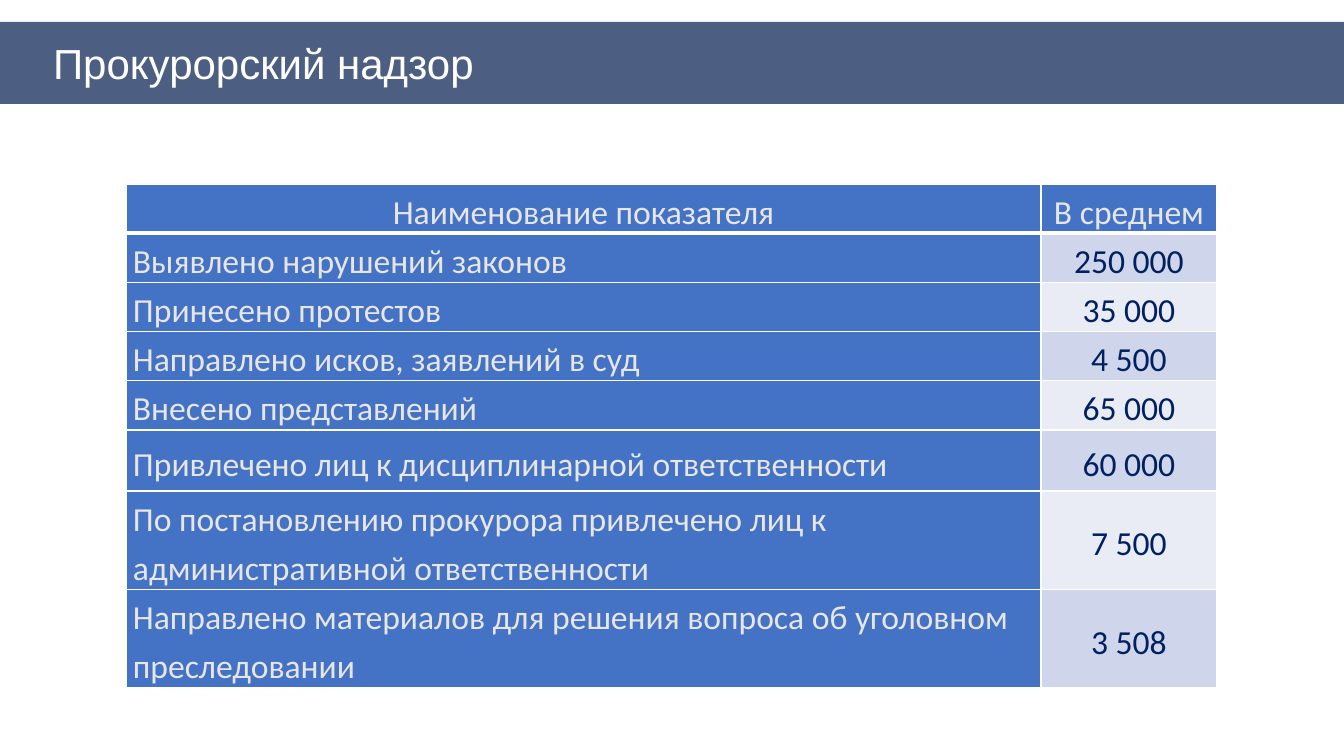
from lxml.etree import SubElement
from pptx import Presentation
from pptx.dml.color import RGBColor
from pptx.enum.text import MSO_ANCHOR, MSO_AUTO_SIZE, PP_ALIGN
from pptx.oxml import parse_xml
from pptx.oxml.ns import nsdecls, qn
from pptx.util import Emu, Pt

WHITE, PALE, BLUE, NAVY = "FFFFFF", "E7E6E6", "4472C4", "002060"
BANDS = ["E9EBF5", "CFD5EA"]
HEADER = ("Наименование показателя", "В среднем")
INDICATORS = [
    ("Выявлено нарушений законов", "250 000"),
    ("Принесено протестов", "35 000"),
    ("Направлено исков, заявлений в суд", "4 500"),
    ("Внесено представлений", "65 000"),
    ("Привлечено лиц к дисциплинарной ответственности", "60 000"),
    ("По постановлению прокурора привлечено лиц к административной ответственности", "7 500"),
    ("Направлено материалов для решения вопроса об уголовном преследовании", "3 508"),
]
ROW_HEIGHTS = [49] * 5 + [61] + [98] * 2


def px(length):
    return Emu(round(length * 914400 / 100.8))


def paint(target, color):
    target.solid()
    target.fore_color.rgb = RGBColor.from_string(color)


class SupervisionSlide:
    def __init__(self, presentation):
        self.slide = presentation.slides.add_slide(presentation.slide_layouts[5])

    def add_text(self, paragraph, text, font, size, color, align):
        paragraph.alignment = align
        run = paragraph.add_run()
        run.text = text
        run.font.name = font
        run.font.size = Pt(size)
        run.font.bold = False
        paint(run.font.fill, color)

    def title(self, text, left, top, width, height):
        heading = self.slide.shapes.title
        heading.left, heading.top = px(left), px(top)
        heading.width, heading.height = px(width), px(height)
        paint(heading.fill, "203864")
        tint = heading._element.spPr.find(".//" + qn("a:srgbClr"))
        SubElement(tint, qn("a:alpha"), val="80000")
        frame = heading.text_frame
        frame.word_wrap = True
        frame.auto_size = MSO_AUTO_SIZE.NONE
        frame.vertical_anchor = MSO_ANCHOR.MIDDLE
        paragraph = frame.paragraphs[0]
        self.add_text(paragraph, text, "Arial", 30, WHITE, PP_ALIGN.LEFT)
        properties = paragraph._p.get_or_add_pPr()
        properties.set("marL", str(px(4)))
        properties.set("indent", str(px(39)))

    def borders(self, cell, top, bottom):
        properties = cell._tc.get_or_add_tcPr()
        sides = {"L": 1, "R": 1, "T": top, "B": bottom}
        for position, (side, points) in enumerate(sides.items()):
            properties.insert(position, parse_xml(
                f'<a:ln{side} {nsdecls("a")} w="{Pt(points)}"><a:solidFill>'
                f'<a:srgbClr val="{WHITE}"/></a:solidFill></a:ln{side}>'))

    def cell(self, cell, text, fill, color, align, top, bottom):
        cell.margin_left = cell.margin_right = px(7)
        cell.margin_top = cell.margin_bottom = 0
        cell.vertical_anchor = MSO_ANCHOR.MIDDLE
        paint(cell.fill, fill)
        self.borders(cell, top, bottom)
        paragraph = cell.text_frame.paragraphs[0]
        self.add_text(paragraph, text, "Calibri", 24, color, align)
        paragraph.line_spacing = 1.2
        paragraph.space_after = Pt(8)

    def table(self, rows, left, top, widths, heights):
        table = self.slide.shapes.add_table(
            len(rows), len(widths), px(left), px(top),
            px(sum(widths)), px(sum(heights))).table
        table.horz_banding = False
        for column, width in zip(table.columns, widths):
            column.width = px(width)
        for row, height in zip(table.rows, heights):
            row.height = px(height)
        for r, texts in enumerate(rows):
            for c, text in enumerate(texts):
                is_value = r > 0 and c == 1
                is_name = r > 0 and c == 0
                self.cell(
                    table.cell(r, c), text,
                    BANDS[r % 2] if is_value else BLUE,
                    NAVY if is_value else PALE,
                    PP_ALIGN.LEFT if is_name else PP_ALIGN.CENTER,
                    top=3 if r == 1 else 1, bottom=3 if r == 0 else 1)


def main():
    presentation = Presentation()
    presentation.slide_width, presentation.slide_height = px(1344), px(756)
    supervision = SupervisionSlide(presentation)
    supervision.table([HEADER] + INDICATORS, 126, 184, [915, 176], ROW_HEIGHTS)
    supervision.title("Прокурорский надзор", 0, 22, 1344, 82)
    presentation.save("out.pptx")


if __name__ == "__main__":
    main()
